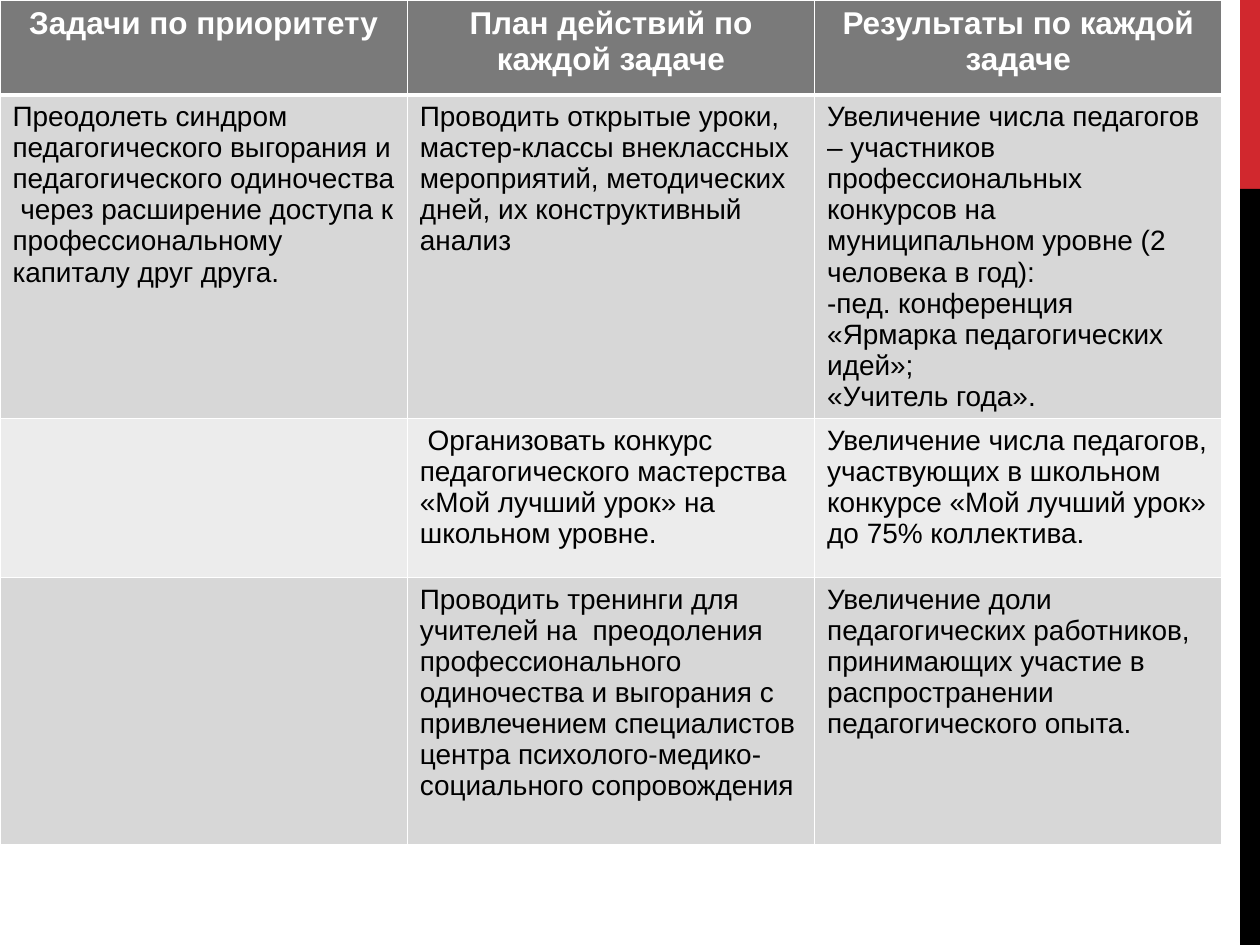
from dataclasses import dataclass

from lxml import etree
from pptx import Presentation, util as u
from pptx.dml.color import RGBColor
from pptx.enum import shapes, text
from pptx.oxml import ns

PX = 914400 / 126


@dataclass(frozen=True)
class Theme:
    font: str = "Arial"
    head: int = 18
    body: int = 16
    red: str = "D1282E"
    black: str = "000000"
    white: str = "FFFFFF"
    top: str = "7A7A7A"
    dark: str = "D7D7D7"
    light: str = "ECECEC"


def px(n):
    return u.Emu(round(n * PX))


def write(frame, lines, font, size, color, bold=False, align=None):
    frame.word_wrap = True
    for i, line in enumerate(lines):
        para = frame.paragraphs[0] if i == 0 else frame.add_paragraph()
        para.alignment = align
        run = para.add_run()
        run.text = line
        run.font.name = font
        run.font.size = u.Pt(size)
        run.font.bold = bold
        run.font.color.rgb = RGBColor.from_string(color)


class Deck:
    def __init__(self, theme, wide, high):
        self.theme = theme
        self.show = Presentation()
        self.show.slide_width, self.show.slide_height = px(wide), px(high)
        self.slide = self.show.slides.add_slide(self.show.slide_layouts[6])

    def bar(self, x, y, w, h, color):
        box = self.slide.shapes.add_shape(
            shapes.MSO_SHAPE.RECTANGLE, px(x), px(y), px(w), px(h))
        box.shadow.inherit = False
        box.fill.solid()
        box.fill.fore_color.rgb = RGBColor.from_string(color)
        box.line.fill.background()

    def edge(self, cell, **widths):
        props = cell._tc.get_or_add_tcPr()
        for i, (side, width) in enumerate(widths.items()):
            line = etree.Element(ns.qn(f"a:ln{side}"), w=str(u.Pt(width)))
            fill = etree.SubElement(line, ns.qn("a:solidFill"))
            etree.SubElement(fill, ns.qn("a:srgbClr"), val=self.theme.white)
            props.insert(i, line)

    def cell(self, cell, row, lines):
        t = self.theme
        cell.fill.solid()
        color = t.top if row == 0 else t.dark if row % 2 else t.light
        cell.fill.fore_color.rgb = RGBColor.from_string(color)
        self.edge(cell, L=1, R=1, T=3 if row == 1 else 1, B=3 if row == 0 else 1)
        if row == 0:
            write(cell.text_frame, lines, t.font, t.head, t.white,
                  bold=True, align=text.PP_ALIGN.CENTER)
        else:
            write(cell.text_frame, lines, t.font, t.body, t.black)

    def table(self, x, y, w, h, highs, rows):
        cols = len(rows[0])
        frame = self.slide.shapes.add_table(
            len(rows), cols, px(x), px(y), px(w), px(h))
        grid = frame.table
        for col in grid.columns:
            col.width = px(w / cols)
        for r, (high, row) in enumerate(zip(highs, rows)):
            grid.rows[r].height = px(high)
            for c, lines in enumerate(row):
                self.cell(grid.cell(r, c), r, lines)
        frame.height = px(h)

    def save(self):
        self.show.save("out.pptx")


ROWS = [
    [["Задачи по приоритету"],
     ["План действий по каждой задаче"],
     ["Результаты по каждой задаче"]],
    [["Преодолеть синдром педагогического выгорания и педагогического "
      "одиночества  через расширение доступа к профессиональному "
      "капиталу друг друга."],
     ["Проводить открытые уроки, мастер-классы внеклассных мероприятий, "
      "методических дней, их конструктивный анализ"],
     ["Увеличение числа педагогов – участников профессиональных конкурсов "
      "на муниципальном уровне (2 человека в год):",
      "-пед. конференция «Ярмарка педагогических идей»;",
      "«Учитель года»."]],
    [[],
     [" Организовать конкурс педагогического мастерства "
      "«Мой лучший урок» на школьном уровне."],
     ["Увеличение числа педагогов, участвующих в школьном конкурсе "
      "«Мой лучший урок» до 75% коллектива."]],
    [[],
     ["Проводить тренинги для учителей на  преодоления профессионального "
      "одиночества и выгорания с привлечением специалистов центра "
      "психолого-медико-социального сопровождения"],
     ["Увеличение доли педагогических работников, принимающих участие "
      "в распространении педагогического опыта."]],
]


def main():
    theme = Theme()
    deck = Deck(theme, 1260, 945)
    deck.bar(1240, 0, 20, 189, theme.red)
    deck.bar(1240, 189, 20, 756, theme.black)
    deck.table(0, 0, 1222, 869, [95, 278, 159, 267], ROWS)
    deck.save()


if __name__ == "__main__":
    main()
